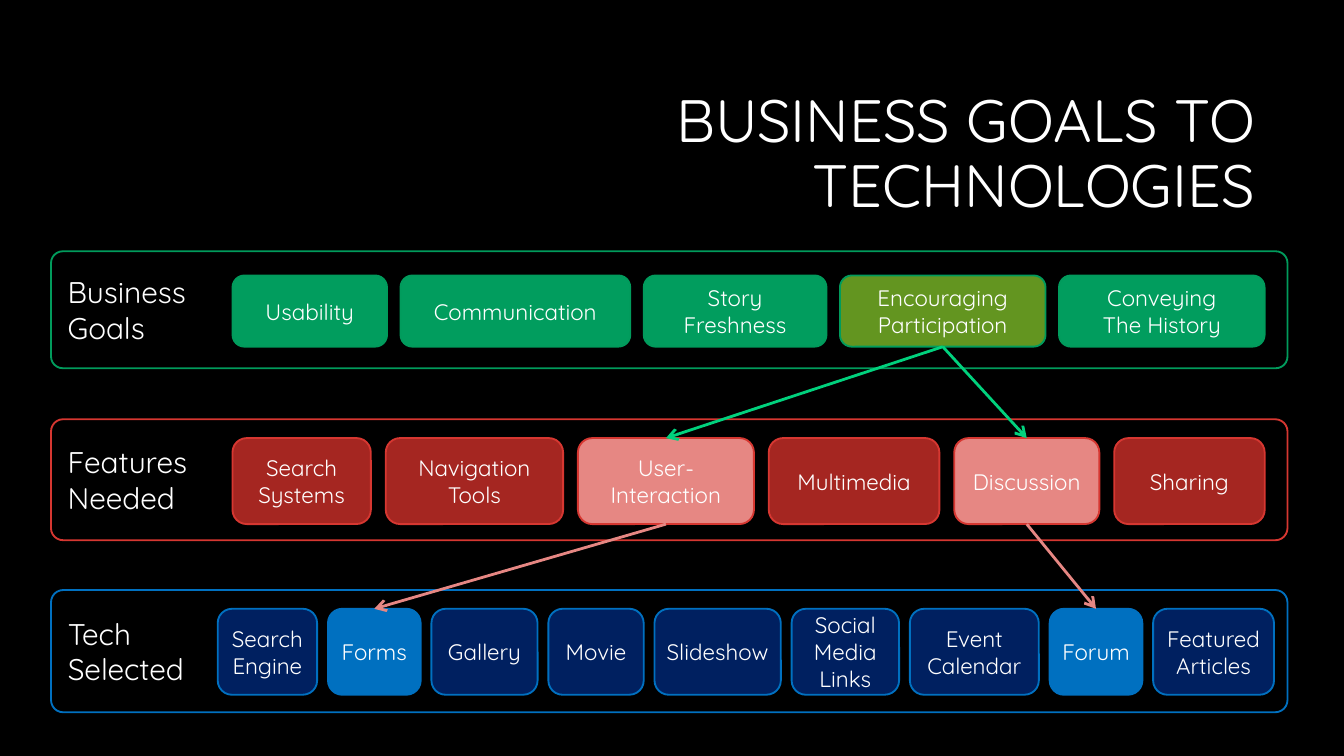
"""Build the slide that maps business goals to features and technologies."""
from dataclasses import dataclass

import pptx
import pptx.dml.color
import pptx.enum.shapes
import pptx.enum.text
import pptx.oxml
import pptx.oxml.ns
import pptx.util

COLS = 1000
CELL = pptx.util.Inches(0.01)
BAND_LEFT, BAND_WIDTH = 38, 920
TOP, BOTTOM = 0, 2
ALIGN = pptx.enum.text.PP_ALIGN


@dataclass(frozen=True)
class Theme:
    """Font, type sizes and shared colours."""
    font: str = "Quicksand"
    title: int = 32
    label: int = 16
    item: int = 12
    back: str = "000000"
    text: str = "FFFFFF"
    goal_arrow: str = "01D17D"
    feature_arrow: str = "E68783"


@dataclass(frozen=True)
class Band:
    """One framed row: place, colours and its items as (text, columns)."""
    label: str
    top: int
    height: int
    left: int
    gap: int
    item_height: int
    side_inset: int
    line: str
    fill: str
    accent: str
    chosen: tuple
    items: tuple


THEME = Theme()

GOALS = Band(
    "Business\nGoals", 187, 87, 173, 10, 53, 10, "019B5C", "019D5E", "639520",
    ("Encouraging Participation",),
    (("Usability", 115), ("Communication", 171), ("Story\nFreshness", 136),
     ("Encouraging Participation", 153), ("Conveying\nThe History", 153)))

FEATURES = Band(
    "Features\nNeeded", 312, 90, 173, 11, 64, 10, "D63731", "A52621", "E68783",
    ("User-Interaction", "Discussion"),
    (("Search\nSystems", 103), ("Navigation\nTools", 132),
     ("User-Interaction", 131), ("Multimedia", 127), ("Discussion", 108),
     ("Sharing", 112)))

TECH = Band(
    "Tech\nSelected", 439, 91, 162, 8, 64, 0, "0070C0", "002060", "0070C0",
    ("Forms", "Forum"),
    (("Search Engine", 74), ("Forms", 69), ("Gallery", 79), ("Movie", 71),
     ("Slideshow", 94), ("Social Media\nLinks", 80), ("Event\nCalendar", 96),
     ("Forum", 69), ("Featured\nArticles", 90)))

LINKS = (
    ("Encouraging Participation", "User-Interaction", THEME.goal_arrow),
    ("Encouraging Participation", "Discussion", THEME.goal_arrow),
    ("User-Interaction", "Forms", THEME.feature_arrow),
    ("Discussion", "Forum", THEME.feature_arrow))


def rgb(code):
    """Turn a hex code into a colour."""
    return pptx.dml.color.RGBColor.from_string(code)


def write(tf, text, size, align):
    """Fill a text frame with evenly styled paragraphs."""
    tf.text = text
    tf.word_wrap = True
    tf.vertical_anchor = pptx.enum.text.MSO_ANCHOR.MIDDLE
    for p in tf.paragraphs:
        p.alignment = align
        p.font.name = THEME.font
        p.font.size = pptx.util.Pt(size)
        p.font.color.rgb = rgb(THEME.text)


def add_title(s, text):
    """Place the title placeholder at the upper right."""
    sp = s.shapes.title
    sp.left, sp.top, sp.width, sp.height = (n * CELL for n in (238, 63, 706, 106))
    write(sp.text_frame, text, THEME.title, ALIGN.RIGHT)
    sp.text_frame.auto_size = pptx.enum.text.MSO_AUTO_SIZE.NONE
    sp.text_frame.paragraphs[0].line_spacing = 0.9


def add_box(s, box, line, fill=None):
    """Draw a rounded box, hollow unless a fill is given."""
    sp = s.shapes.add_shape(
        pptx.enum.shapes.MSO_SHAPE.ROUNDED_RECTANGLE, *(n * CELL for n in box))
    sp.shadow.inherit = False
    sp.line.color.rgb = rgb(line)
    sp.line.width = pptx.util.Pt(1)
    if fill:
        sp.fill.solid()
        sp.fill.fore_color.rgb = rgb(fill)
    else:
        sp.fill.background()
    return sp


def add_band(s, band):
    """Draw a labelled frame with its items and return them by text."""
    frame = add_box(s, (BAND_LEFT, band.top, BAND_WIDTH, band.height), band.line)
    frame.adjustments[0] = 0.1
    write(frame.text_frame, band.label, THEME.label, ALIGN.LEFT)
    top = band.top + (band.height - band.item_height) // 2 + 1
    left, boxes = band.left, {}
    for text, width in band.items:
        fill = band.accent if text in band.chosen else band.fill
        sp = add_box(s, (left, top, width, band.item_height), band.line, fill)
        tf = sp.text_frame
        tf.margin_left = tf.margin_right = band.side_inset * CELL
        write(tf, text, THEME.item, ALIGN.CENTER)
        boxes[text] = sp
        left += width + band.gap
    return boxes


def add_arrow(s, start, end, color):
    """Join the bottom of one box to the top of another."""
    c = s.shapes.add_connector(
        pptx.enum.shapes.MSO_CONNECTOR.STRAIGHT, 0, 0, 0, 0)
    c.begin_connect(start, BOTTOM)
    c.end_connect(end, TOP)
    c.line.color.rgb = rgb(color)
    c.line.width = pptx.util.Pt(1.5)
    ns = pptx.oxml.ns.nsdecls("a")
    c.line._get_or_add_ln().append(
        pptx.oxml.parse_xml(f'<a:tailEnd {ns} type="arrow"/>'))
    c._element.spPr.append(pptx.oxml.parse_xml(f"<a:effectLst {ns}/>"))


def main():
    """Build and save the slide."""
    prs = pptx.Presentation()
    prs.slide_width = COLS * CELL
    prs.slide_height = prs.slide_width * 9 // 16
    s = prs.slides.add_slide(prs.slide_layouts.get_by_name("Title Only"))
    s.background.fill.solid()
    s.background.fill.fore_color.rgb = rgb(THEME.back)
    add_title(s, "BUSINESS GOALS TO TECHNOLOGIES")
    boxes = {}
    for band in (GOALS, FEATURES, TECH):
        boxes.update(add_band(s, band))
    for start, end, color in LINKS:
        add_arrow(s, boxes[start], boxes[end], color)
    prs.save("out.pptx")


if __name__ == "__main__":
    main()
